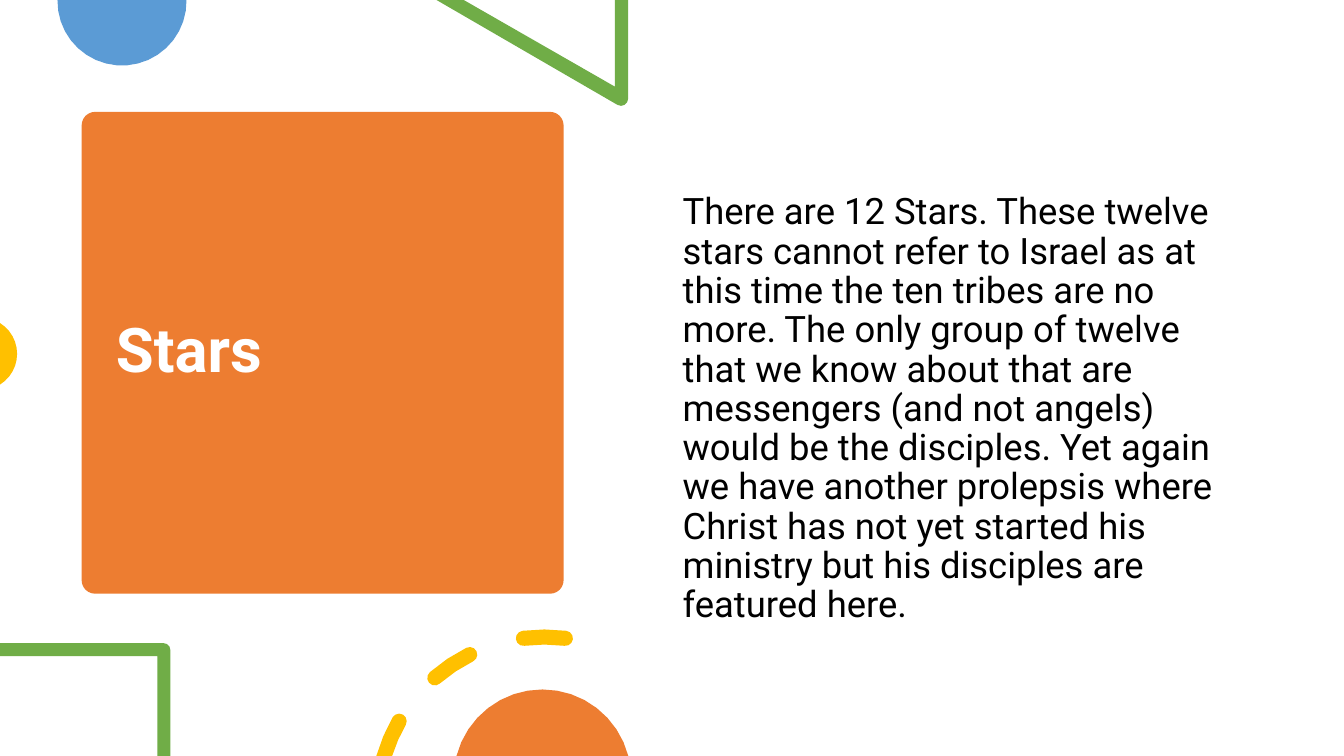
from math import acos, asin, ceil, cos, degrees, radians, sin

from lxml.etree import SubElement
from pptx import Presentation
from pptx.dml.color import RGBColor
from pptx.enum.shapes import MSO_SHAPE
from pptx.enum.text import MSO_ANCHOR, MSO_AUTO_SIZE, PP_ALIGN
from pptx.oxml.ns import qn
from pptx.util import Inches, Pt

SLIDE_W, SLIDE_H = 13.33, 7.5
COLORS = {
    "orange": "ED7D31", "blue": "5B9BD5", "green": "70AD47",
    "yellow": "FFC000", "white": "FFFFFF", "black": "000000",
}
FONT = "Roboto"
STARS_TEXT = (
    "There are 12 Stars. These twelve stars cannot refer to Israel as at this "
    "time the ten tribes are no more. The only group of twelve that we know "
    "about that are messengers (and not angels) would be the disciples. Yet "
    "again we have another prolepsis where Christ has not yet started his "
    "ministry but his disciples are featured here."
)


def place(item, left, top, width, height):
    item.left, item.top = Inches(left), Inches(top)
    item.width, item.height = Inches(width), Inches(height)


def paint(item, color):
    item.shadow.inherit = False
    item.fill.solid()
    item.fill.fore_color.rgb = RGBColor.from_string(COLORS[color])
    item.line.fill.background()


def write(holder, text, size, color, bold, frame_format):
    frame = holder.text_frame
    for name, value in frame_format.items():
        setattr(frame, name, value)
    paragraph = frame.paragraphs[0]
    run = paragraph.add_run()
    run.text = text
    paragraph_format = {"alignment": PP_ALIGN.LEFT, "line_spacing": 0.9,
                        "space_before": Pt(0)}
    for name, value in paragraph_format.items():
        setattr(paragraph, name, value)
    for name, value in {"name": FONT, "size": Pt(size), "bold": bold}.items():
        setattr(run.font, name, value)
    run.font.color.rgb = RGBColor.from_string(COLORS[color])
    return paragraph


def arc(cx, cy, radius, start, end, step=10):
    """Points of an arc, counter-clockwise from the right."""
    count = max(1, ceil(abs(end - start) / step))
    angles = [radians(start + (end - start) * i / count) for i in range(count + 1)]
    return [(cx + radius * cos(a), cy - radius * sin(a)) for a in angles]


def draw_outlines(slide, outlines, color):
    """One filled freeform from closed outlines."""
    builder = None
    for outline in outlines:
        points = [(Inches(x), Inches(y)) for x, y in outline]
        if builder is None:
            builder = slide.shapes.build_freeform(*points[0])
        else:
            builder.move_to(*points[0])
        builder.add_line_segments(points[1:], close=True)
    paint(builder.convert_to_shape(), color)


def add_title_card(slide, left, top, side):
    card = slide.shapes.add_shape(MSO_SHAPE.ROUNDED_RECTANGLE, Inches(left),
                                  Inches(top), Inches(side), Inches(side))
    card.adjustments[0] = 0.028
    paint(card, "orange")

    # Title lies in front of its card
    title = slide.shapes.title
    title._element.addprevious(card._element)
    place(title, left + 0.24, top + 0.11, side - 0.47, side - 0.22)
    write(title, "Stars", 44, "white", True, {
        "word_wrap": True, "auto_size": MSO_AUTO_SIZE.NONE,
        "vertical_anchor": MSO_ANCHOR.MIDDLE})


def add_body(slide, left, top, width, height):
    body = slide.placeholders[1]
    place(body, left, top, width, height)
    paragraph = write(body, STARS_TEXT, 26, "black", False, {
        "word_wrap": True, "auto_size": MSO_AUTO_SIZE.NONE,
        "vertical_anchor": MSO_ANCHOR.TOP, "margin_top": Inches(1.02)})
    properties = paragraph._p.get_or_add_pPr()
    properties.set("marL", "0")
    properties.set("indent", "0")
    SubElement(properties, qn("a:buNone"))


def add_cut_disc(slide, cx, cy, radius, middle, edge_distance, color):
    """Disc cut by the slide edge, which lies edge_distance from its centre."""
    half = degrees(acos(edge_distance / radius))
    draw_outlines(slide, [arc(cx, cy, radius, middle - half, middle + half)], color)


def add_triangle(slide, right, bottom, band=0.13):
    corner = arc(right - 0.07, bottom - 0.07, 0.07, -120, 0, 30)
    draw_outlines(slide, [[
        (right, 0), (right - band, 0), (right - band, bottom - 0.19),
        (right - 1.63, 0), (right - 1.9, 0), *corner]], "green")


def add_frame(slide, right, top, band=0.13):
    corner = arc(right - 0.07, top + 0.07, 0.07, 0, 90, 30)
    draw_outlines(slide, [[
        *corner, (0, top), (0, top + band), (right - band, top + band),
        (right - band, SLIDE_H), (right, SLIDE_H)]], "green")


def add_dashed_ring(slide, cx, cy, radius, band=0.15, step=33.7, half=7.2):
    outer, inner = radius + band / 2, radius - band / 2
    outer_limit, inner_limit = (
        180 - degrees(asin((cy - SLIDE_H) / r)) for r in (outer, inner))
    dashes = []
    for i in range(3):
        start, end = 90 + step * i - half, 90 + step * i + half
        (start_x, start_y), (end_x, end_y) = (
            arc(cx, cy, radius, angle, angle)[0] for angle in (start, end))
        # A dash that reaches the slide edge is cut flat there
        end_cap = [] if end > inner_limit else arc(
            end_x, end_y, band / 2, end, end + 180, 30)
        dashes.append([
            *arc(cx, cy, outer, start, min(end, outer_limit)), *end_cap,
            *arc(cx, cy, inner, min(end, inner_limit), start),
            *arc(start_x, start_y, band / 2, start + 180, start + 360, 30)])
    draw_outlines(slide, dashes, "yellow")


def main():
    prs = Presentation()
    prs.slide_width, prs.slide_height = Inches(SLIDE_W), Inches(SLIDE_H)
    slide = prs.slides.add_slide(prs.slide_layouts[1])
    slide.background.fill.solid()
    slide.background.fill.fore_color.rgb = RGBColor.from_string(COLORS["white"])

    # Text regions
    add_title_card(slide, 0.81, 1.11, 4.78)
    add_body(slide, 6.67, 0.9, 5.75, 5.35)

    # Ornaments along the top and left edges
    add_cut_disc(slide, 1.21, 0.01, 0.64, 270, -0.01, "blue")
    add_triangle(slide, 6.23, 1.05)
    add_cut_disc(slide, -0.19, 3.51, 0.36, 0, 0.19, "yellow")

    # Ornaments along the bottom edge
    add_frame(slide, 1.69, 6.38)
    add_dashed_ring(slide, 5.4, 7.98, 1.66)
    add_cut_disc(slide, 5.38, 7.72, 0.88, 90, 0.22, "orange")

    prs.save("out.pptx")


if __name__ == "__main__":
    main()
